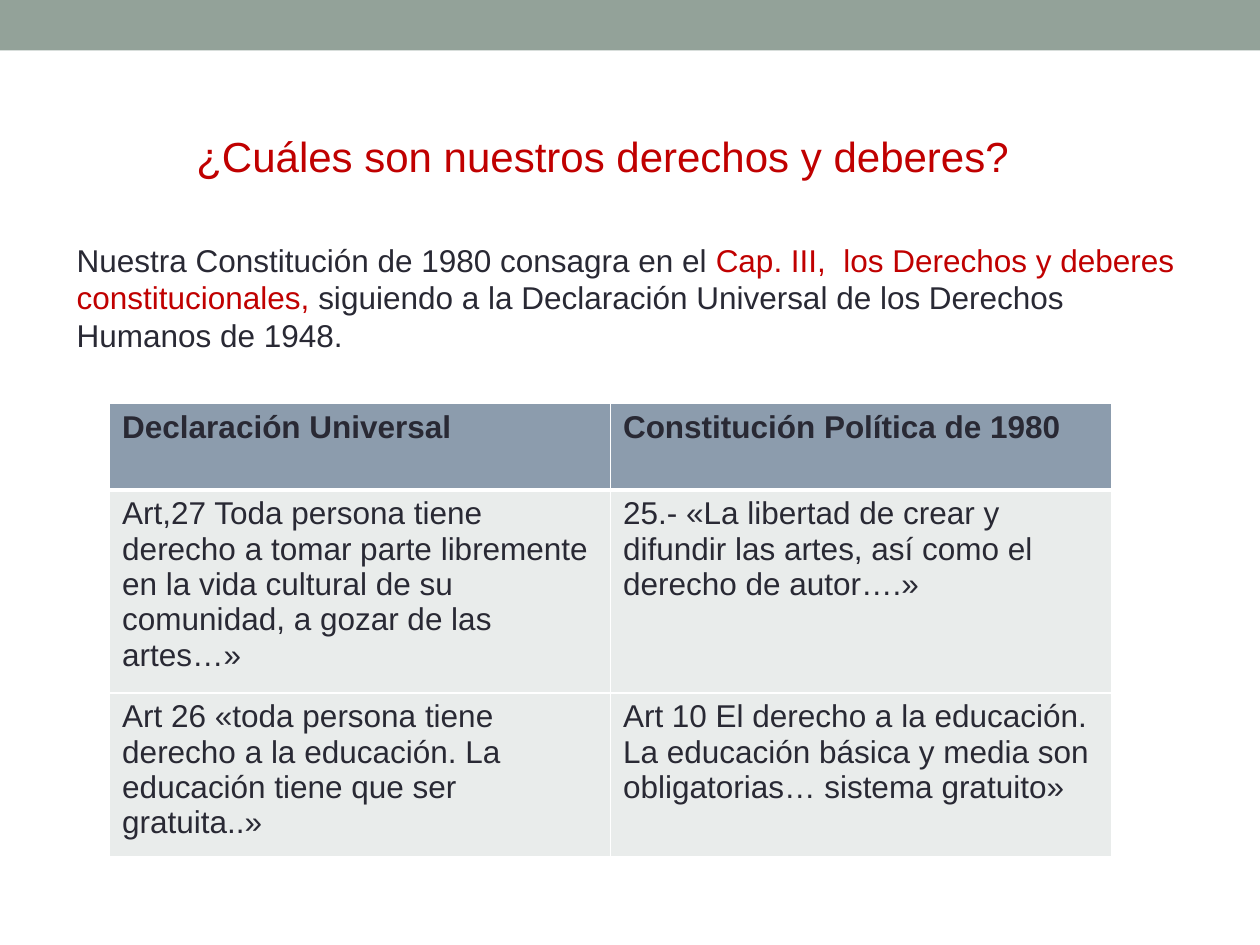
from lxml.etree import SubElement
from pptx import Presentation
from pptx.dml.color import RGBColor as Color
from pptx.enum.shapes import MSO_SHAPE as Preset
from pptx.oxml.ns import qn
from pptx.util import Inches, Pt

COLORS = {
    "band": "93A299",
    "accent": "C00000",
    "text": "292934",
    "header": "8C9CAD",
    "body": "E9ECEB",
    "border": "FFFFFF",
}
FONT = "Arial"
TITLE = [("¿Cuáles son nuestros derechos y deberes?", "accent")]
INTRODUCTION = [
    ("Nuestra Constitución de 1980 consagra en el ", "text"),
    ("Cap. III,  los Derechos y deberes constitucionales,", "accent"),
    (" siguiendo a la Declaración Universal de los Derechos Humanos de 1948.", "text"),
]
ARTICLES = [
    ("Declaración Universal", "Constitución Política de 1980"),
    (
        "Art,27 Toda persona tiene derecho a tomar parte libremente en la vida "
        "cultural de su comunidad, a gozar de las artes…»",
        "25.- «La libertad de crear y difundir las artes, así como el derecho de autor….»",
    ),
    (
        "Art 26 «toda persona tiene derecho a la educación. La educación tiene "
        "que ser gratuita..»",
        "Art 10 El derecho a la educación. La educación básica y media son "
        "obligatorias… sistema gratuito»",
    ),
]
ROW_HEIGHTS = [0.69, 1.61, 1.3]
TABLE_LEFT, TABLE_TOP, TABLE_WIDTH = 0.87, 3.2, 7.95


def color(name):
    return Color.from_string(COLORS[name])


def write(paragraph, runs, size, bold=False):
    paragraph.font.name = FONT
    paragraph.font.size = Pt(size)
    paragraph.font.bold = bold
    for text, name in runs:
        run = paragraph.add_run()
        run.text = text
        run.font.color.rgb = color(name)


def add_text(slide, box, runs, size):
    frame = slide.shapes.add_textbox(*map(Inches, box)).text_frame
    frame.word_wrap = True
    write(frame.paragraphs[0], runs, size)


def add_borders(cell, bottom_width):
    properties = cell._tc.get_or_add_tcPr()
    widths = {"a:lnL": 1, "a:lnR": 1, "a:lnT": 1, "a:lnB": bottom_width}
    for tag, width in widths.items():
        line = SubElement(properties, qn(tag), w=str(Pt(width)))
        fill = SubElement(line, qn("a:solidFill"))
        SubElement(fill, qn("a:srgbClr"), val=COLORS["border"])


def add_articles(slide):
    rows, columns = len(ARTICLES), len(ARTICLES[0])
    box = (TABLE_LEFT, TABLE_TOP, TABLE_WIDTH, sum(ROW_HEIGHTS))
    table = slide.shapes.add_table(rows, columns, *map(Inches, box)).table
    for index, (texts, height) in enumerate(zip(ARTICLES, ROW_HEIGHTS)):
        is_header = index == 0
        table.rows[index].height = Inches(height)
        for cell, text in zip(table.rows[index].cells, texts):
            add_borders(cell, 3 if is_header else 1)
            cell.fill.solid()
            cell.fill.fore_color.rgb = color("header" if is_header else "body")
            write(cell.text_frame.paragraphs[0], [(text, "text")], 18, is_header)
        if index == 1:
            for cell in table.rows[index].cells:
                top = cell._tc.tcPr.find(qn("a:lnT"))
                top.set("w", str(Pt(3)))


def main():
    presentation = Presentation()
    presentation.slide_width = Inches(10)
    presentation.slide_height = Inches(7.5)
    slide = presentation.slides.add_slide(presentation.slide_layouts[6])

    band = slide.shapes.add_shape(
        Preset.RECTANGLE, 0, 0, presentation.slide_width, Inches(0.4)
    )
    band.shadow.inherit = False
    band.fill.solid()
    band.fill.fore_color.rgb = color("band")
    band.line.fill.background()

    add_text(slide, (1.46, 0.99, 7.35, 0.5), TITLE, 24)
    add_text(slide, (0.51, 1.86, 8.98, 1.01), INTRODUCTION, 18)
    add_articles(slide)
    presentation.save("out.pptx")


if __name__ == "__main__":
    main()
